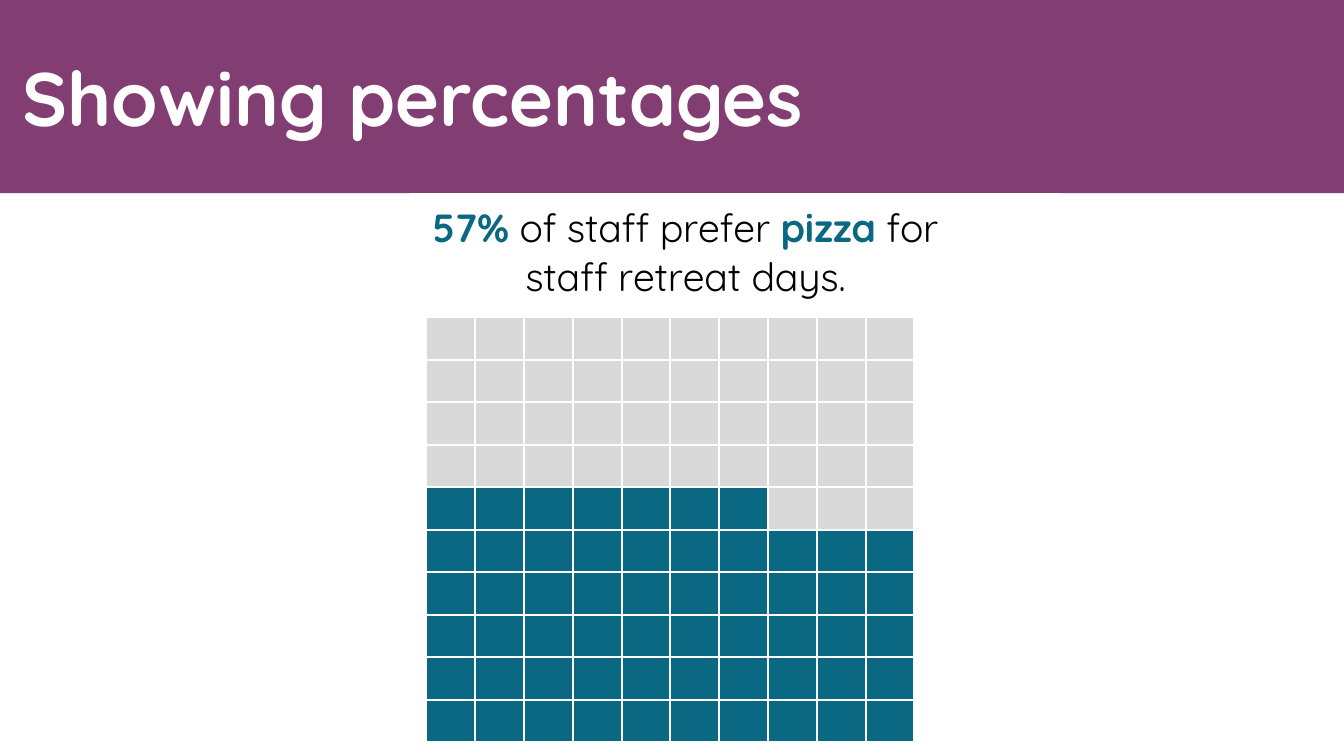
from lxml import etree
from pptx import Presentation
from pptx.chart.data import CategoryChartData
from pptx.dml.color import RGBColor
from pptx.enum.chart import XL_CHART_TYPE
from pptx.enum.shapes import MSO_SHAPE
from pptx.enum.text import MSO_ANCHOR, PP_ALIGN
from pptx.oxml import parse_xml
from pptx.oxml.ns import nsdecls, qn
from pptx.util import Pt

HEX = {"plum": "823D73", "teal": "0A6882", "grey": "D9D9D9",
       "white": "FFFFFF", "black": "000000"}
SIDE = 10
SHARE = 57


def paint(fill, name):
    fill.solid()
    fill.fore_color.rgb = RGBColor.from_string(HEX[name])


def layout(**spots):
    """Build a manual chart layout from fractions of the chart."""
    node = parse_xml(f"<c:layout {nsdecls('c')}><c:manualLayout/></c:layout>")
    for tag, val in spots.items():
        etree.SubElement(node[0], qn("c:" + tag)).set("val", str(val))
    return node


deck = Presentation()
deck.slide_width, deck.slide_height = Pt(960), Pt(540)
slide = deck.slides.add_slide(deck.slide_layouts[6])

# Heading band
band = slide.shapes.add_shape(MSO_SHAPE.RECTANGLE, 0, 0, Pt(960), Pt(138))
band.shadow.inherit = False
paint(band.fill, "plum")
band.line.fill.background()
frame = band.text_frame
frame.margin_left = Pt(16)
frame.vertical_anchor = MSO_ANCHOR.MIDDLE
head = frame.paragraphs[0]
head.alignment = PP_ALIGN.LEFT
run = head.add_run()
run.text = "Showing percentages"
run.font.name, run.font.size, run.font.bold = "Quicksand", Pt(54), True
paint(run.font.fill, "white")

# Chart: ten stacked rows of ten equal cells
data = CategoryChartData()
data.categories = [str(col + 1) for col in range(SIDE)]
for row in range(SIDE):
    data.add_series(f"Series {row + 1}", [100] * SIDE)
chart = slide.shapes.add_chart(XL_CHART_TYPE.COLUMN_STACKED, Pt(293), Pt(138),
                               Pt(463), Pt(403), data).chart
chart.has_legend = False
chart.font.name, chart.font.size = "Calibri", Pt(10)
paint(chart.font.fill, "black")
plot = chart.plots[0]
plot.gap_width, plot.overlap, plot.vary_by_categories = 0, 100, False

# Colour the cells up to the share
for row, series in enumerate(plot.series):
    full = min(max(SHARE - row * SIDE, 0), SIDE)
    paint(series.format.fill, "teal" if full else "grey")
    paint(series.format.line.fill, "white")
    series.format.line.width = Pt(1.5)
    if full:
        for col in range(full, SIDE):
            cell = series.points[col].format
            paint(cell.fill, "grey")
            paint(cell.line.fill, "white")
            cell.line.width = Pt(1.5)

# Axes
chart.category_axis.visible = False
axis = chart.value_axis
axis.minimum_scale, axis.maximum_scale = 0, 1000
axis.has_major_gridlines = True
grid = axis.major_gridlines.format.line
paint(grid.fill, "grey")
grid.width = Pt(0.75)
axis.visible = False

# Chart title
title = chart.chart_title
line = title.text_frame.paragraphs[0]
line.alignment = PP_ALIGN.CENTER
for text, bold in (("57%", True), (" of staff prefer ", False),
                   ("pizza", True), (" for staff retreat days.", False)):
    run = line.add_run()
    run.text = text
    run.font.name, run.font.size, run.font.bold = "Quicksand", Pt(28), bold
    paint(run.font.fill, "teal" if bold else "black")

# Title and plot places, white chart ground
node = title._element
area = plot._element.getparent()
for part in (node, area):
    for old in part.findall(qn("c:layout")):
        part.remove(old)
node.find(qn("c:tx")).addnext(layout(xMode="edge", yMode="edge", x=0.03, y=0.01))
area.insert(0, layout(layoutTarget="inner", xMode="edge", yMode="edge",
                      x=0.025, y=0.22, w=0.753, h=0.753))
ground = parse_xml(
    f"<c:spPr {nsdecls('c', 'a')}><a:solidFill><a:srgbClr val='{HEX['white']}'/>"
    "</a:solidFill><a:ln><a:noFill/></a:ln></c:spPr>")
chart._chartSpace.find(qn("c:txPr")).addprevious(ground)

deck.save("out.pptx")
